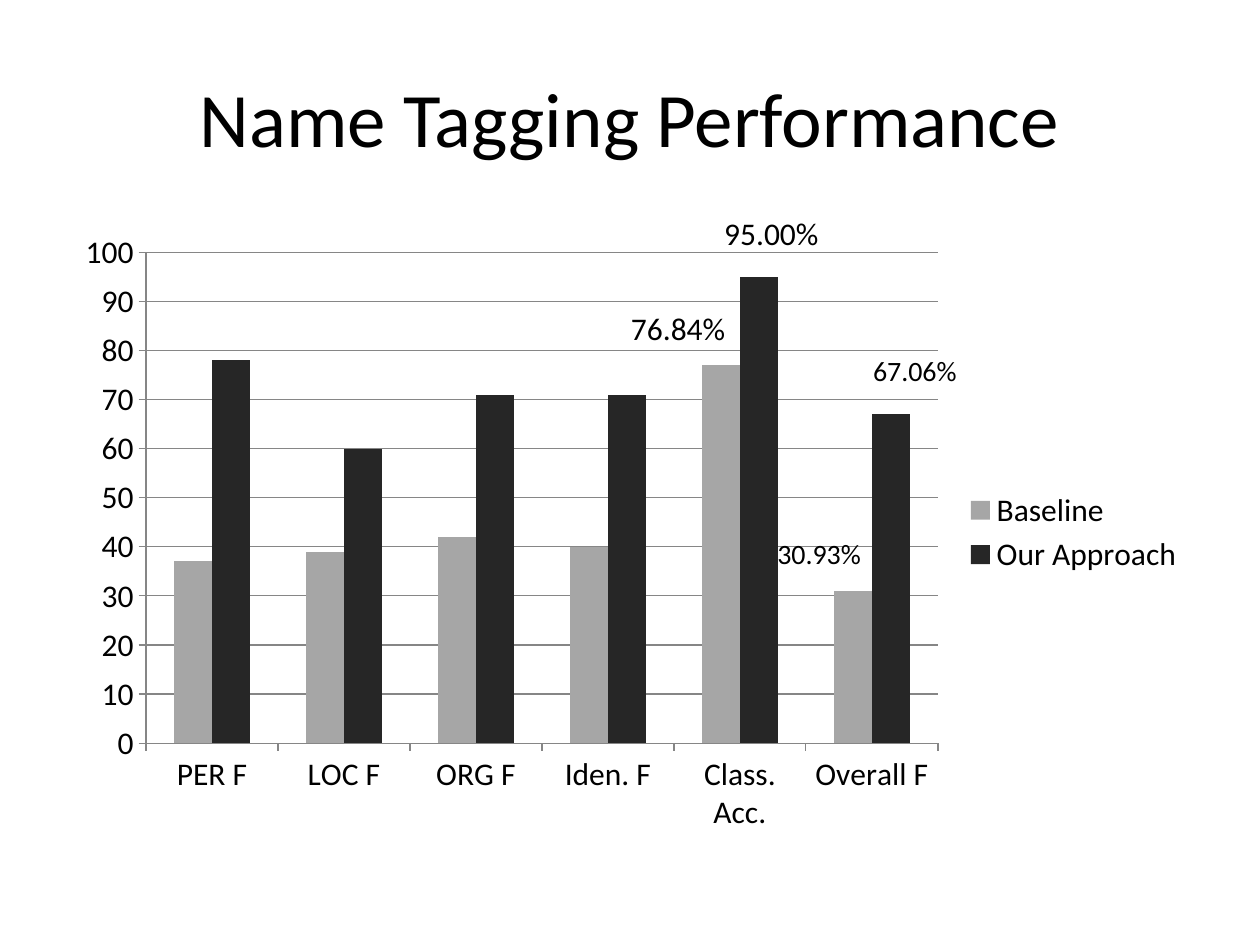
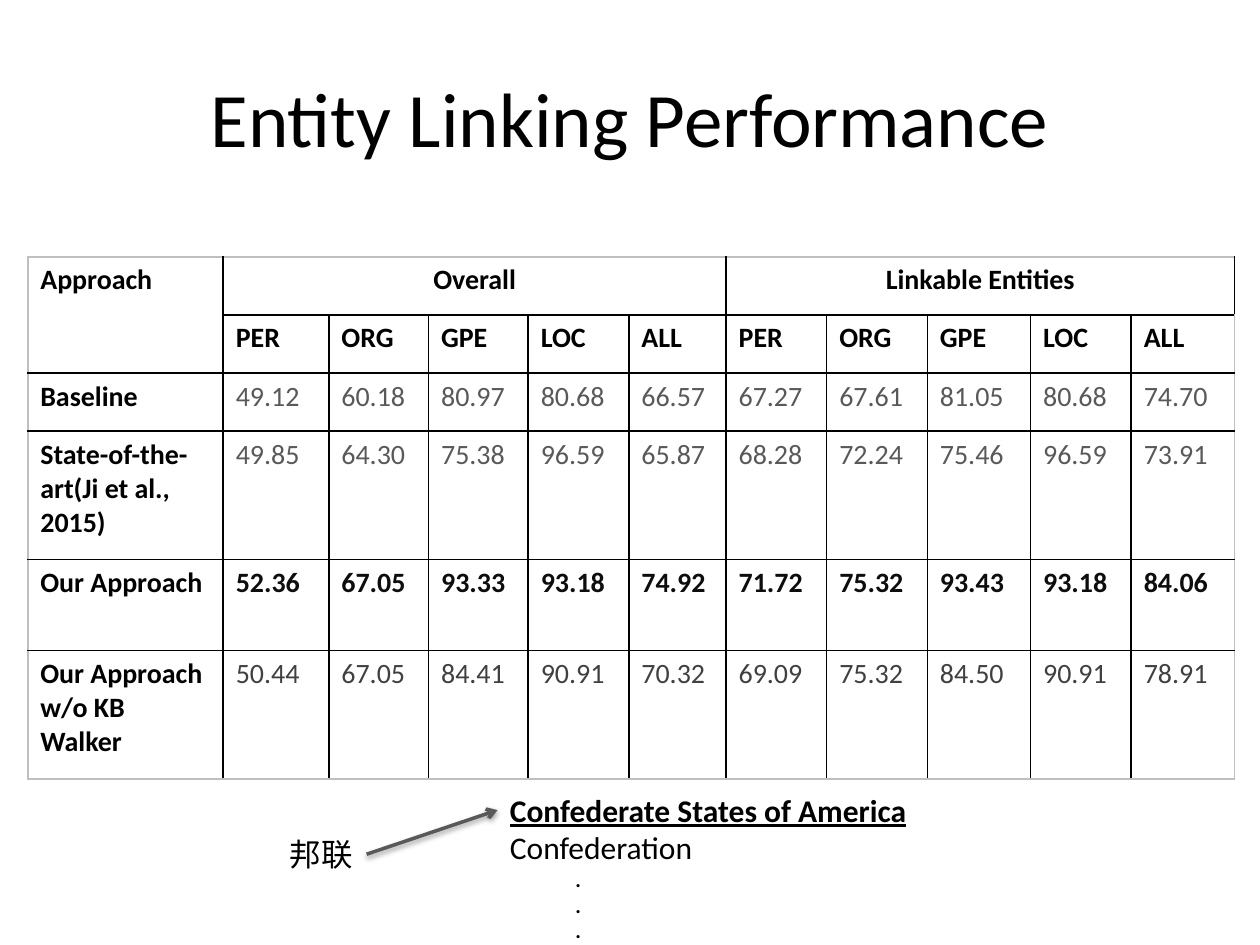
from lxml import etree
from pptx import Presentation
from pptx.chart.data import CategoryChartData
from pptx.dml.color import RGBColor
from pptx.enum.chart import XL_CHART_TYPE, XL_LEGEND_POSITION, XL_TICK_MARK
from pptx.enum.shapes import MSO_CONNECTOR
from pptx.enum.text import MSO_ANCHOR, MSO_AUTO_SIZE, PP_ALIGN
from pptx.oxml import parse_xml
from pptx.oxml.ns import nsdecls, qn
from pptx.util import Cm, Pt

COLUMNS = XL_CHART_TYPE.COLUMN_CLUSTERED
RIGHT = XL_LEGEND_POSITION.RIGHT
OUTSIDE = XL_TICK_MARK.OUTSIDE
STRAIGHT = MSO_CONNECTOR.STRAIGHT
MIDDLE = MSO_ANCHOR.MIDDLE
GROW = MSO_AUTO_SIZE.SHAPE_TO_FIT_TEXT
LEFT, CENTER = PP_ALIGN.LEFT, PP_ALIGN.CENTER

FONT = "Calibri"
TITLE_ONLY = 5
COLORS = {
    "text": "000000",
    "paper": "FFFFFF",
    "axis": "868686",
    "baseline": "A6A6A6",
    "ours": "262626",
    "frame": "BFBFBF",
    "score": "595959",
    "best": "0D0D0D",
    "ablation": "404040",
}

CATEGORIES = ["PER F", "LOC F", "ORG F", "Iden. F", "Class. Acc.", "Overall F"]
SERIES = [
    ("Baseline", "baseline", [37, 39, 42, 40, 77, 31]),
    ("Our Approach", "ours", [78, 60, 71, 71, 95, 67]),
]
BAR_LABELS = [
    ("67.06%", 17.35, 7.01, 16),
    ("95.00%", 14.35, 4.19, 18),
    ("30.93%", 15.42, 10.69, 16),
    ("76.84%", 12.47, 6.1, 18),
]

ENTITY_TYPES = ["PER", "ORG", "GPE", "LOC", "ALL"]
COL_WIDTHS = [3.94, 2.13, 2.01, 2.01, 2.03, 1.96, 2.03, 2.03, 2.08, 2.03, 2.08]
ROW_HEIGHTS = [1.17, 1.17, 1.17, 2.59, 1.83, 2.59]
SCORES = [
    ("Baseline", "score", False,
     "49.12 60.18 80.97 80.68 66.57 67.27 67.61 81.05 80.68 74.70"),
    ("State-of-the-art(Ji et al., 2015)", "score", False,
     "49.85 64.30 75.38 96.59 65.87 68.28 72.24 75.46 96.59 73.91"),
    ("Our Approach", "best", True,
     "52.36 67.05 93.33 93.18 74.92 71.72 75.32 93.43 93.18 84.06"),
    ("Our Approach w/o KB Walker", "ablation", False,
     "50.44 67.05 84.41 90.91 70.32 69.09 75.32 84.50 90.91 78.91"),
]


def rgb(name):
    """Return the named palette colour."""
    return RGBColor.from_string(COLORS[name])


def set_font(font, size, color="text", bold=False, underline=False):
    """Format a run font or a chart font."""
    font.name, font.size = FONT, Pt(size)
    font.bold, font.underline = bold, underline
    font.color.rgb = rgb(color)


def write(tf, text, align=LEFT, **fmt):
    """Fill a text frame, one paragraph per line of text."""
    for i, line in enumerate(text.split("\n")):
        p = tf.add_paragraph() if i else tf.paragraphs[0]
        p.alignment = align
        r = p.add_run()
        r.text = line
        set_font(r.font, **fmt)


def add_titled_slide(prs, title):
    """Add a slide with a centred title."""
    s = prs.slides.add_slide(prs.slide_layouts[TITLE_ONLY])
    sp = s.shapes.title
    sp.left, sp.top, sp.width, sp.height = Cm(1.27), Cm(0.76), Cm(22.86), Cm(3.18)
    sp.text_frame.vertical_anchor = MIDDLE
    write(sp.text_frame, title, align=CENTER, size=44)
    return s


def add_text(s, text, x, y, w, h, wrap=False, **fmt):
    """Add a text box that grows with its text."""
    sp = s.shapes.add_textbox(Cm(x), Cm(y), Cm(w), Cm(h))
    tf = sp.text_frame
    tf.word_wrap, tf.auto_size = wrap, GROW
    write(tf, text, **fmt)
    return sp


def style_axis(axis):
    """Give an axis its line and outside ticks."""
    axis.major_tick_mark = OUTSIDE
    axis.format.line.color.rgb = rgb("axis")


def add_score_chart(s):
    """Add the column chart of tagging scores."""
    data = CategoryChartData()
    data.categories = CATEGORIES
    for name, _, values in SERIES:
        data.add_series(name, values)
    chart = s.shapes.add_chart(
        COLUMNS, Cm(1.27), Cm(4.45), Cm(22.86), Cm(12.57), data).chart
    set_font(chart.font, 18)
    chart.has_title = False
    chart.has_legend = True
    chart.legend.position = RIGHT
    chart.legend.include_in_layout = False
    style_axis(chart.category_axis)
    style_axis(chart.value_axis)
    chart.value_axis.minimum_scale = 0
    chart.value_axis.maximum_scale = 100
    chart.value_axis.major_unit = 10
    chart.value_axis.major_gridlines.format.line.color.rgb = rgb("axis")
    plot = chart.plots[0]
    plot.gap_width, plot.overlap, plot.vary_by_categories = 150, 0, False
    for series, (_, color, _) in zip(plot.series, SERIES):
        series.format.fill.solid()
        series.format.fill.fore_color.rgb = rgb(color)


def set_borders(cell, sides):
    """Draw 1 pt cell borders in the colours given for left, right, top, bottom."""
    tc_pr = cell._tc.get_or_add_tcPr()
    for i, (tag, color) in enumerate(zip(("lnL", "lnR", "lnT", "lnB"), sides)):
        tc_pr.insert(i, parse_xml(
            f'<a:{tag} {nsdecls("a")} w="12700"><a:solidFill>'
            f'<a:srgbClr val="{COLORS[color]}"/></a:solidFill></a:{tag}>'))


def style_grid(table):
    """Fill the cells and draw a light frame around dark inner lines."""
    last_row, last_col = len(ROW_HEIGHTS) - 1, len(COL_WIDTHS) - 1
    for i in range(last_row + 1):
        for j in range(last_col + 1):
            cell = table.cell(i, j)
            cell.fill.solid()
            cell.fill.fore_color.rgb = rgb("paper")
            on_frame = (j == 0, j == last_col, i == 0, i == last_row)
            set_borders(cell, ["frame" if edge else "text" for edge in on_frame])


def add_score_table(s):
    """Add the table of linking scores with its two-level header."""
    table = s.shapes.add_table(
        len(ROW_HEIGHTS), len(COL_WIDTHS), Cm(0.56), Cm(5.18),
        Cm(sum(COL_WIDTHS)), Cm(sum(ROW_HEIGHTS))).table
    table.first_row = table.horz_banding = False
    for col, width in zip(table.columns, COL_WIDTHS):
        col.width = Cm(width)
    for row, height in zip(table.rows, ROW_HEIGHTS):
        row.height = Cm(height)
    style_grid(table)

    def put(i, j, text, bold=True, **fmt):
        """Write one cell."""
        write(table.cell(i, j).text_frame, text, size=16, bold=bold, **fmt)

    table.cell(0, 0).merge(table.cell(1, 0))
    put(0, 0, "Approach")
    span = len(ENTITY_TYPES)
    for j, group in ((1, "Overall"), (1 + span, "Linkable Entities")):
        table.cell(0, j).merge(table.cell(0, j + span - 1))
        put(0, j, group, align=CENTER)
        for k, entity_type in enumerate(ENTITY_TYPES, j):
            put(1, k, entity_type)
    for i, (approach, color, bold, scores) in enumerate(SCORES, 2):
        put(i, 0, approach)
        for j, score in enumerate(scores.split(), 1):
            put(i, j, score, bold=bold, color=color)


def add_arrow(s, start, end):
    """Join the right side of one box to the left side of another."""
    cx = s.shapes.add_connector(STRAIGHT, 0, 0, 0, 0)
    cx.begin_connect(start, 3)
    cx.end_connect(end, 1)
    cx.line.color.rgb = rgb("score")
    cx.line.width = Pt(2)
    etree.SubElement(cx.line._get_or_add_ln(), qn("a:tailEnd"), type="arrow")
    cx._element.spPr.append(parse_xml(
        f'<a:effectLst {nsdecls("a")}>'
        '<a:outerShdw blurRad="40000" dist="20000" dir="5400000" rotWithShape="0">'
        f'<a:srgbClr val="{COLORS["text"]}"><a:alpha val="38000"/></a:srgbClr>'
        '</a:outerShdw></a:effectLst>'))


def add_tagging_slide(prs):
    """Build the name tagging slide."""
    s = add_titled_slide(prs, "Name Tagging Performance")
    add_score_chart(s)
    for text, x, y, size in BAR_LABELS:
        add_text(s, text, x, y, 3.43, 0.94 if size == 16 else 1.02, wrap=True, size=size)


def add_linking_slide(prs):
    """Build the entity linking slide."""
    s = add_titled_slide(prs, "Entity Linking Performance")
    add_score_table(s)
    mention = add_text(s, "邦联", 5.59, 16.71, 1.8, 1.02, size=18)
    entity = add_text(s, "Confederate States of America", 10.03, 15.82, 8.66, 1.02,
                      size=18, bold=True, underline=True)
    add_text(s, "Confederation", 10.03, 16.56, 4.27, 1.02, size=18)
    add_text(s, ".\n.\n.", 11.35, 17.35, 0.64, 1.8, size=12, bold=True)
    add_arrow(s, mention, entity)


def main():
    """Build and save the presentation."""
    prs = Presentation()
    prs.slide_width, prs.slide_height = Cm(25.4), Cm(19.05)
    add_tagging_slide(prs)
    add_linking_slide(prs)
    prs.save("out.pptx")


if __name__ == "__main__":
    main()
